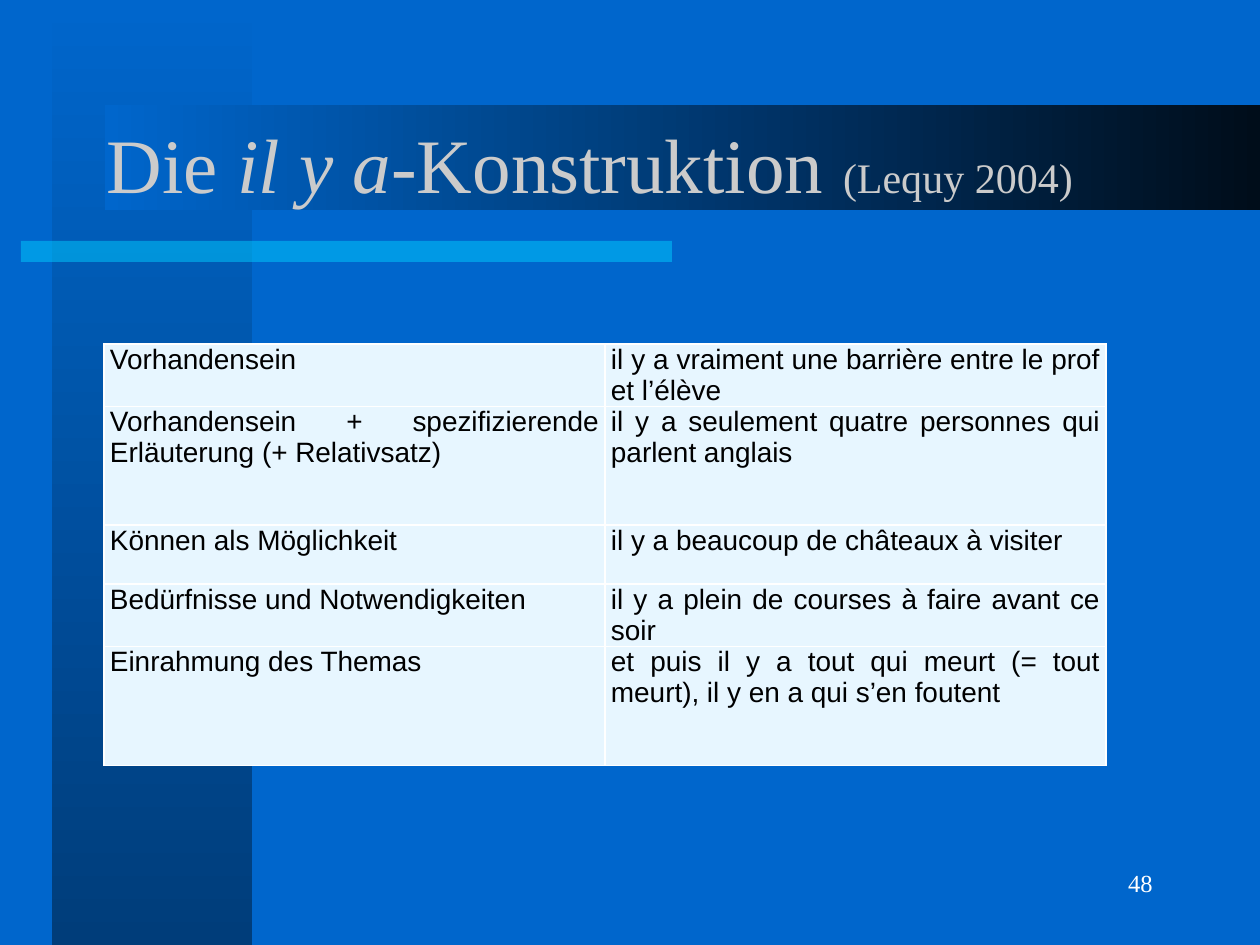
from lxml import etree
from pptx import Presentation
from pptx import util as u
from pptx.dml.color import RGBColor
from pptx.enum import shapes, text
from pptx.oxml import parse_xml
from pptx.oxml.ns import nsdecls, qn

C = {"bg": "0066CC", "band": "003D7A", "bar": "000D1A", "accent": "00CCFF",
     "title": "CBCBCB", "cell": "E7F6FF", "white": "FFFFFF", "black": "000000"}
SCALE = 914400 / 126


def px(*lengths):
    return [u.Emu(round(n * SCALE)) for n in lengths]


def style(r, font, size, color):
    r.font.name, r.font.size = font, u.Pt(size)
    r.font.color.rgb = RGBColor.from_string(C[color])


prs = Presentation()
prs.slide_width, prs.slide_height = px(1260, 945)
s = prs.slides.add_slide(prs.slide_layouts[5])
s.background.fill.solid()
s.background.fill.fore_color.rgb = RGBColor.from_string(C["bg"])

for box, colors, angle in [
    ((52, 0, 200, 945), ("bg", "band"), 270),
    ((21, 241, 651, 21), ("accent",), None),
    ((105, 105, 1155, 105), ("bg", "bar"), 0),
]:
    sp = s.shapes.add_shape(shapes.MSO_SHAPE.RECTANGLE, *px(*box))
    sp.shadow.inherit = False
    sp.line.fill.background()
    if angle is None:
        sp.fill.solid()
        sp.fill.fore_color.rgb = RGBColor.from_string(C[colors[0]])
        clr = sp.fill._xPr.find(qn("a:solidFill"))[0]
        etree.SubElement(clr, qn("a:alpha"), val="50000")
    else:
        sp.fill.gradient()
        sp.fill.gradient_angle = angle
        for stop, color in zip(sp.fill.gradient_stops, colors):
            stop.color.rgb = RGBColor.from_string(C[color])

title = s.shapes.title
title.left, title.top, title.width, title.height = px(94, 84, 1071, 158)
tf = title.text_frame
tf.vertical_anchor = text.MSO_ANCHOR.MIDDLE
p = tf.paragraphs[0]
p.alignment = text.PP_ALIGN.LEFT
for words, size, italic in [("Die ", 44, False), ("il y a", 44, True),
                            ("-Konstruktion ", 44, False), ("(Lequy 2004)", 24, False)]:
    r = p.add_run()
    r.text = words
    style(r, "Times New Roman", size, "title")
    r.font.italic = italic
s.shapes._spTree.append(title._element)

rows = [
    ("Vorhandensein", "il y a vraiment une barrière entre le prof et l’élève", 59),
    ("Vorhandensein + spezifizierende Erläuterung (+ Relativsatz)",
     "il y a seulement quatre personnes qui parlent anglais", 119),
    ("Können als Möglichkeit", "il y a beaucoup de châteaux à visiter", 59),
    ("Bedürfnisse und Notwendigkeiten", "il y a plein de courses à faire avant ce soir", 59),
    ("Einrahmung des Themas",
     "et puis il y a tout qui meurt (= tout meurt), il y en a qui s’en foutent", 119),
]
height = sum(row[2] for row in rows)
tbl = s.shapes.add_table(len(rows), 2, *px(104, 344, 1002, height)).table
tbl.first_row = tbl.horz_banding = False
for i, (label, example, h) in enumerate(rows):
    tbl.rows[i].height = px(h)[0]
    for j, words in enumerate((label, example)):
        cell = tbl.cell(i, j)
        cell.margin_left = cell.margin_right = px(6)[0]
        cell.margin_top = cell.margin_bottom = 0
        tcPr = cell._tc.get_or_add_tcPr()
        for side in ("lnL", "lnR", "lnT", "lnB"):
            tcPr.append(parse_xml(
                f'<a:{side} {nsdecls("a")} w="12700"><a:solidFill>'
                f'<a:srgbClr val="{C["white"]}"/></a:solidFill></a:{side}>'))
        cell.fill.solid()
        cell.fill.fore_color.rgb = RGBColor.from_string(C["cell"])
        p = cell.text_frame.paragraphs[0]
        p.text = words
        p.alignment = text.PP_ALIGN.JUSTIFY
        style(p.runs[0], "Arial", 16, "black")

number = s.shapes.add_textbox(*px(903, 851, 262, 63))
tf = number.text_frame
tf.word_wrap = True
tf.vertical_anchor = text.MSO_ANCHOR.MIDDLE
tf.text = "48"
p = tf.paragraphs[0]
p.alignment = text.PP_ALIGN.RIGHT
style(p.runs[0], "Times New Roman", 14, "white")

prs.save("out.pptx")
